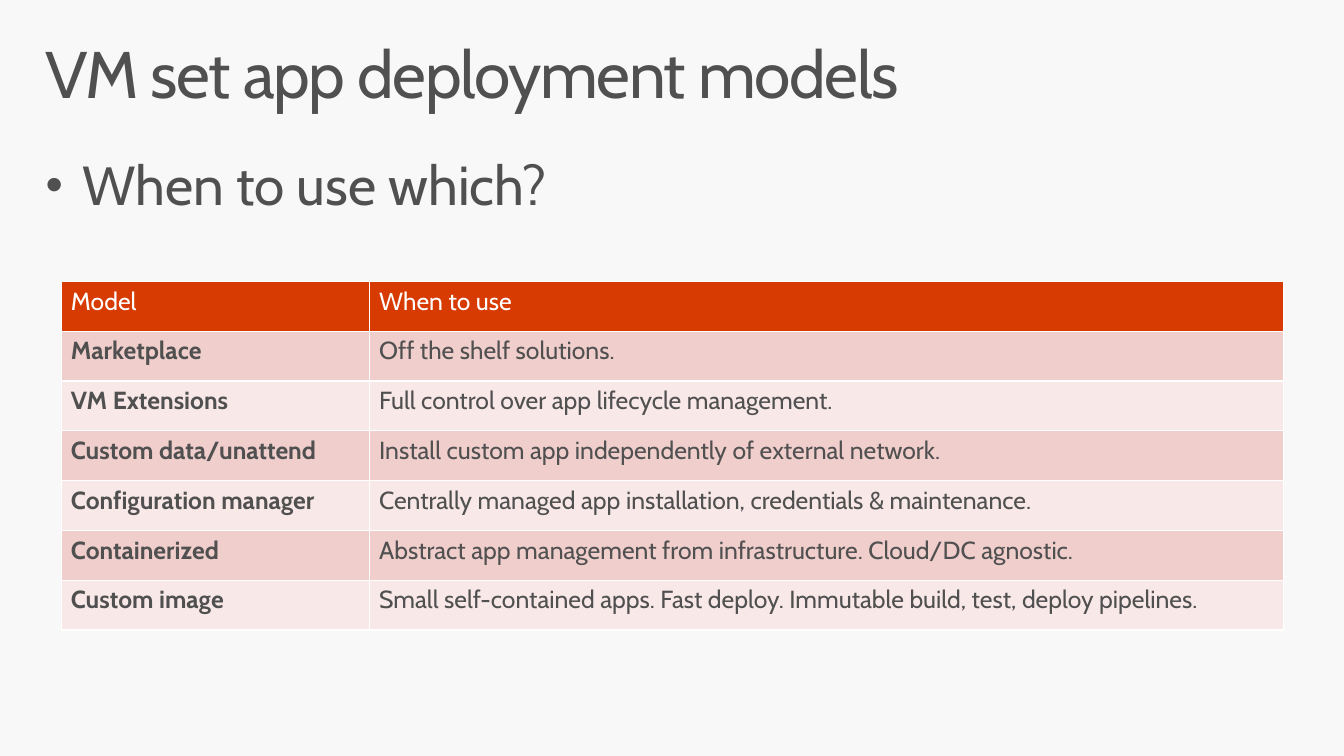
"""Build the slide on VM set app deployment models."""
import pptx
import pptx.dml.color
import pptx.enum.text
import pptx.oxml
import pptx.oxml.ns
import pptx.util

Cm = pptx.util.Cm
Pt = pptx.util.Pt
FACE = "Cabin"
COLORS = {
    "back": "F8F8F8",
    "text": "505050",
    "white": "FFFFFF",
    "head": "D83B01",
    "dark": "F0CECC",
    "light": "F8E8E7",
}
ROWS = [
    ("Model", "When to use"),
    ("Marketplace", "Off the shelf solutions."),
    ("VM Extensions", "Full control over app lifecycle management."),
    ("Custom data/unattend", "Install custom app independently of external network."),
    ("Configuration manager", "Centrally managed app installation, credentials & maintenance."),
    ("Containerized", "Abstract app management from infrastructure. Cloud/DC agnostic."),
    ("Custom image", "Small self-contained apps. Fast deploy. Immutable build, test, deploy pipelines."),
]


def paint(fill, name):
    fill.solid()
    fill.fore_color.rgb = pptx.dml.color.RGBColor.from_string(COLORS[name])


def style(para, size, name, bold=False):
    para.font.name = FACE
    para.font.size = Pt(size)
    para.font.bold = bold
    paint(para.font.fill, name)


deck = pptx.Presentation()
deck.slide_width = Cm(34.54)
deck.slide_height = Cm(19.43)
slide = deck.slides.add_slide(deck.slide_layouts[1])
paint(slide.background.fill, "back")

title = slide.shapes.title
body = slide.placeholders[1]
fit = pptx.enum.text.MSO_AUTO_SIZE
for holder, text, top, height, size, auto in [
    (title, "VM set app deployment models", 0.81, 2.54, 48, fit.NONE),
    (body, "When to use which?", 3.81, 2.06, 40, fit.SHAPE_TO_FIT_TEXT),
]:
    holder.left, holder.top = Cm(0.76), Cm(top)
    holder.width, holder.height = Cm(33.02), Cm(height)
    frame = holder.text_frame
    frame.text = text
    frame.auto_size = auto
    frame.word_wrap = True
    frame.vertical_anchor = pptx.enum.text.MSO_ANCHOR.TOP
    frame.margin_left = frame.margin_right = Cm(0.41)
    frame.margin_top = frame.margin_bottom = Cm(0.25)
    para = frame.paragraphs[0]
    para.alignment = pptx.enum.text.PP_ALIGN.LEFT
    para.line_spacing = 0.9
    style(para, size, "text")

run = title.text_frame.paragraphs[0].runs[0]
run.font._element.set("spc", "-100")

props = body.text_frame.paragraphs[0]._p.get_or_add_pPr()
props.set("marL", str(Cm(0.94)))
props.set("indent", str(-Cm(0.94)))
mark = pptx.oxml.parse_xml(
    f'<a:buSzPct {pptx.oxml.ns.nsdecls("a")} val="90000"/>'
)
props.find(pptx.oxml.ns.qn("a:lnSpc")).addnext(mark)

high = Cm(1.28)
table = slide.shapes.add_table(
    len(ROWS), 2, Cm(1.57), Cm(7.23), Cm(31.42), high * len(ROWS)
).table
table.columns[0].width = Cm(7.92)
table.columns[1].width = Cm(23.5)
for i, row in enumerate(ROWS):
    shade = "head" if i == 0 else "dark" if i % 2 else "light"
    for j, text in enumerate(row):
        cell = table.cell(i, j)
        cell.text = text
        paint(cell.fill, shade)
        style(
            cell.text_frame.paragraphs[0],
            18,
            "text" if i else "white",
            bold=i > 0 and j == 0,
        )

deck.save("out.pptx")
